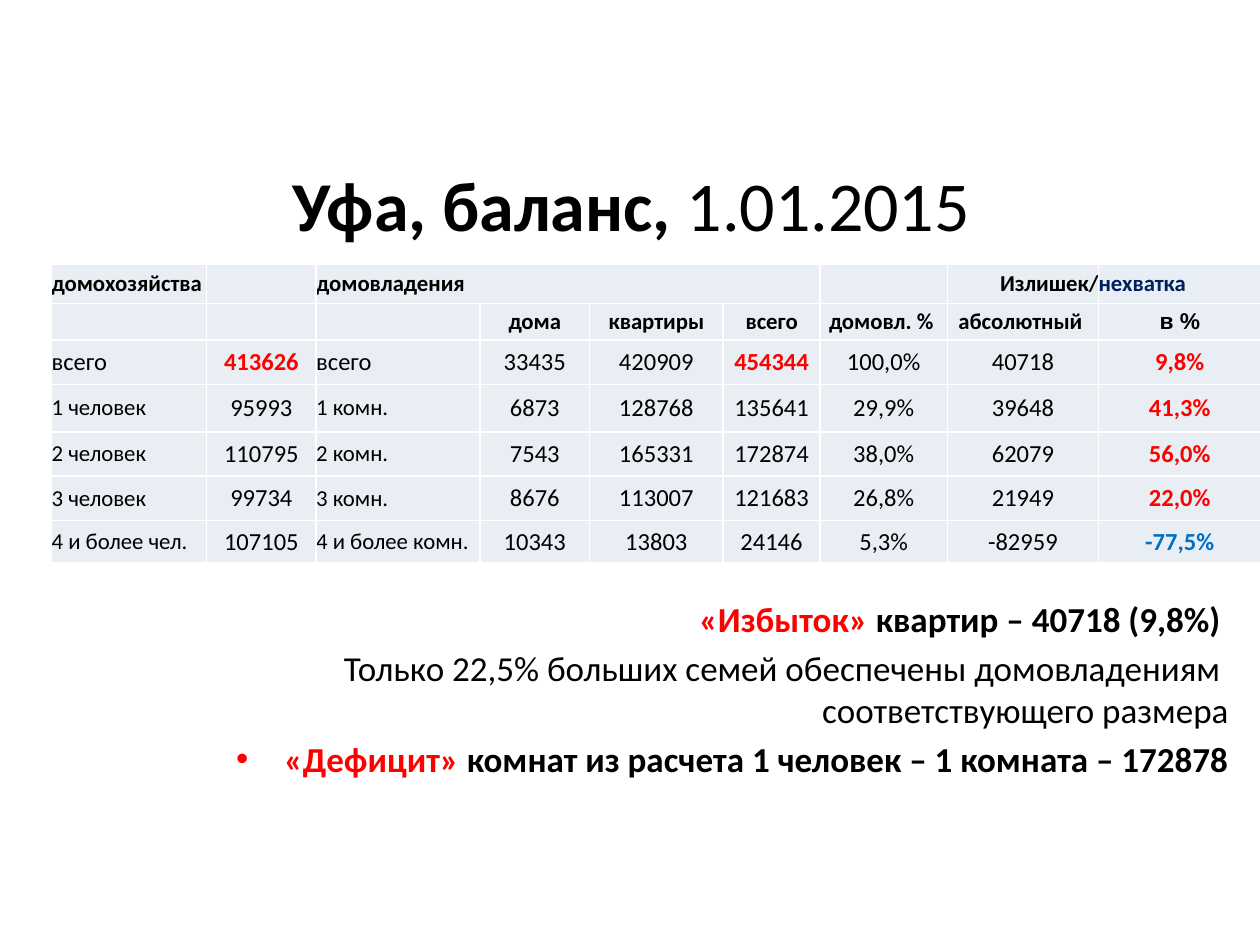
from lxml.etree import SubElement
from pptx import Presentation
from pptx.dml.color import RGBColor
from pptx.enum.text import MSO_ANCHOR as Anchor, PP_ALIGN as Align
from pptx.oxml.ns import qn
from pptx.util import Inches, Pt

BLACK = RGBColor(0, 0, 0)
RED = RGBColor(0xFF, 0, 0)
BLUE = RGBColor(0, 0x70, 0xC0)
NAVY = RGBColor(0, 0x20, 0x60)
PALE = RGBColor(0xE9, 0xED, 0xF4)

COLUMN_WIDTHS = [1.23, 0.87, 1.3, 0.87, 1.06, 0.77, 1.01, 1.2, 1.29]
ROW_HEIGHTS = [0.31, 0.29, 0.35, 0.38, 0.35, 0.35, 0.34]
BALANCE = [
    ["домохозяйства", "", "домовладения", "", "", "", "", "Излишек/", "нехватка"],
    ["", "", "", "дома", "квартиры", "всего", "домовл. % ", "абсолютный ", "в %"],
    ["всего", "413626", "всего", "33435", "420909", "454344", "100,0%", "40718", "9,8%"],
    ["1 человек", "95993", "1 комн.", "6873", "128768", "135641", "29,9%", "39648", "41,3%"],
    ["2 человек", "110795", "2 комн.", "7543", "165331", "172874", "38,0%", "62079", "56,0%"],
    ["3 человек", "99734", "3 комн.", "8676", "113007", "121683", "26,8%", "21949", "22,0%"],
    ["4 и более чел.", "107105", "4 и более комн.", "10343", "13803", "24146", "5,3%",
     "-82959", "-77,5%"],
]
HEADER_ROWS = 2
TOTAL_ROW = 2
LABEL_COLUMNS = (0, 2)
TOTAL_COLUMNS = (1, 5)
SHARE_COLUMN = 8
SURPLUS_COLUMN = 7


def add_run(paragraph, text, size, bold=False, color=BLACK, name="Calibri"):
    run = paragraph.add_run()
    run.text = text
    for attribute, value in {"size": Pt(size), "bold": bold, "name": name}.items():
        setattr(run.font, attribute, value)
    run.font.color.rgb = color


def set_bullet(paragraph, character, margin, indent):
    """Give a hanging bullet, or none when character is empty."""
    properties = paragraph._p.get_or_add_pPr()
    properties.set("marL", str(Inches(margin)))
    properties.set("indent", str(Inches(indent)))
    if character:
        SubElement(properties, qn("a:buFont"), typeface="Arial")
        SubElement(properties, qn("a:buChar"), char=character)
    else:
        SubElement(properties, qn("a:buNone"))


def set_borders(cell):
    properties = cell._tc.get_or_add_tcPr()
    for position, side in enumerate(("a:lnL", "a:lnR", "a:lnT", "a:lnB")):
        line = SubElement(properties, qn(side), w=str(Pt(1)))
        properties.insert(position, line)
        fill = SubElement(line, qn("a:solidFill"))
        SubElement(fill, qn("a:srgbClr"), val="FFFFFF")


def text_format(row, column, text):
    """Return the run format that a table position calls for."""
    if row < HEADER_ROWS:
        last_header = column == SHARE_COLUMN
        return {
            "size": 13,
            "bold": True,
            "color": NAVY if last_header and row == 0 else BLACK,
            "name": "Arial" if last_header and row == 1 else "Calibri",
        }
    key_figure = column == SHARE_COLUMN or (row == TOTAL_ROW and column in TOTAL_COLUMNS)
    color = BLACK
    if key_figure:
        color = BLUE if text.startswith("-") else RED
    small = column in LABEL_COLUMNS and row > TOTAL_ROW
    return {"size": 13 if small else 14, "bold": key_figure, "color": color}


def alignment(row, column):
    if row == 0:
        return Align.RIGHT if column == SURPLUS_COLUMN else Align.LEFT
    return Align.LEFT if column in LABEL_COLUMNS else Align.CENTER


def fill_cell(cell, row, column, text):
    margins = dict.fromkeys(("margin_left", "margin_right", "margin_top", "margin_bottom"), 0)
    for attribute, value in {**margins, "vertical_anchor": Anchor.MIDDLE}.items():
        setattr(cell, attribute, value)
    cell.fill.solid()
    cell.fill.fore_color.rgb = PALE
    set_borders(cell)
    paragraph = cell.text_frame.paragraphs[0]
    paragraph.alignment = alignment(row, column)
    if text:
        add_run(paragraph, text, **text_format(row, column, text))
    else:
        SubElement(paragraph._p, qn("a:endParaRPr"), sz="1300")


def add_title(slide):
    title = slide.shapes.title
    title.left, title.top, title.width, title.height = map(Inches, (0.51, 0.99, 9, 1.25))
    title.text_frame.vertical_anchor = Anchor.MIDDLE
    paragraph = title.text_frame.paragraphs[0]
    paragraph.alignment = Align.CENTER
    add_run(paragraph, "Уфа, баланс, ", 40, bold=True)
    add_run(paragraph, "1.01.2015", 40)


def add_balance_table(slide):
    table = slide.shapes.add_table(
        len(ROW_HEIGHTS), len(COLUMN_WIDTHS), Inches(0.41), Inches(2.1),
        Inches(sum(COLUMN_WIDTHS)), Inches(sum(ROW_HEIGHTS))).table
    table.first_row = table.horz_banding = False
    for column, width in zip(table.columns, COLUMN_WIDTHS):
        column.width = Inches(width)
    for row, height in zip(table.rows, ROW_HEIGHTS):
        row.height = Inches(height)
    for row, values in enumerate(BALANCE):
        for column, text in enumerate(values):
            fill_cell(table.cell(row, column), row, column, text)
    table.cell(0, 2).merge(table.cell(0, 5))


def add_conclusions(slide):
    frame = slide.shapes.add_textbox(
        Inches(0.16), Inches(4.69), Inches(9.69), Inches(1.57)).text_frame
    frame.word_wrap = True
    surplus, families, deficit = (
        frame.paragraphs[0], frame.add_paragraph(), frame.add_paragraph())
    for paragraph in (surplus, families, deficit):
        paragraph.alignment = Align.RIGHT
    for paragraph in (families, deficit):
        paragraph.space_before = Pt(4)
    set_bullet(surplus, "", 0.06, 0)
    set_bullet(families, "", 0.06, 0)
    set_bullet(deficit, "•", 0.38, -0.38)

    add_run(surplus, "«Избыток» ", 20, bold=True, color=RED)
    add_run(surplus, "квартир – 40718 (9,8%) ", 20, bold=True)
    add_run(families, "Только 22,5% больших семей обеспечены домовладениям ", 20)
    families.add_line_break()
    add_run(families, "соответствующего размера", 20)
    add_run(deficit, "«Дефицит» ", 20, bold=True, color=RED)
    add_run(deficit, "комнат из расчета 1 человек – 1 комната – 172878", 20, bold=True)


def main():
    presentation = Presentation()
    presentation.slide_width, presentation.slide_height = Inches(10), Inches(7.5)
    slide = presentation.slides.add_slide(presentation.slide_layouts[5])
    add_title(slide)
    add_conclusions(slide)
    add_balance_table(slide)
    presentation.save("out.pptx")


if __name__ == "__main__":
    main()
